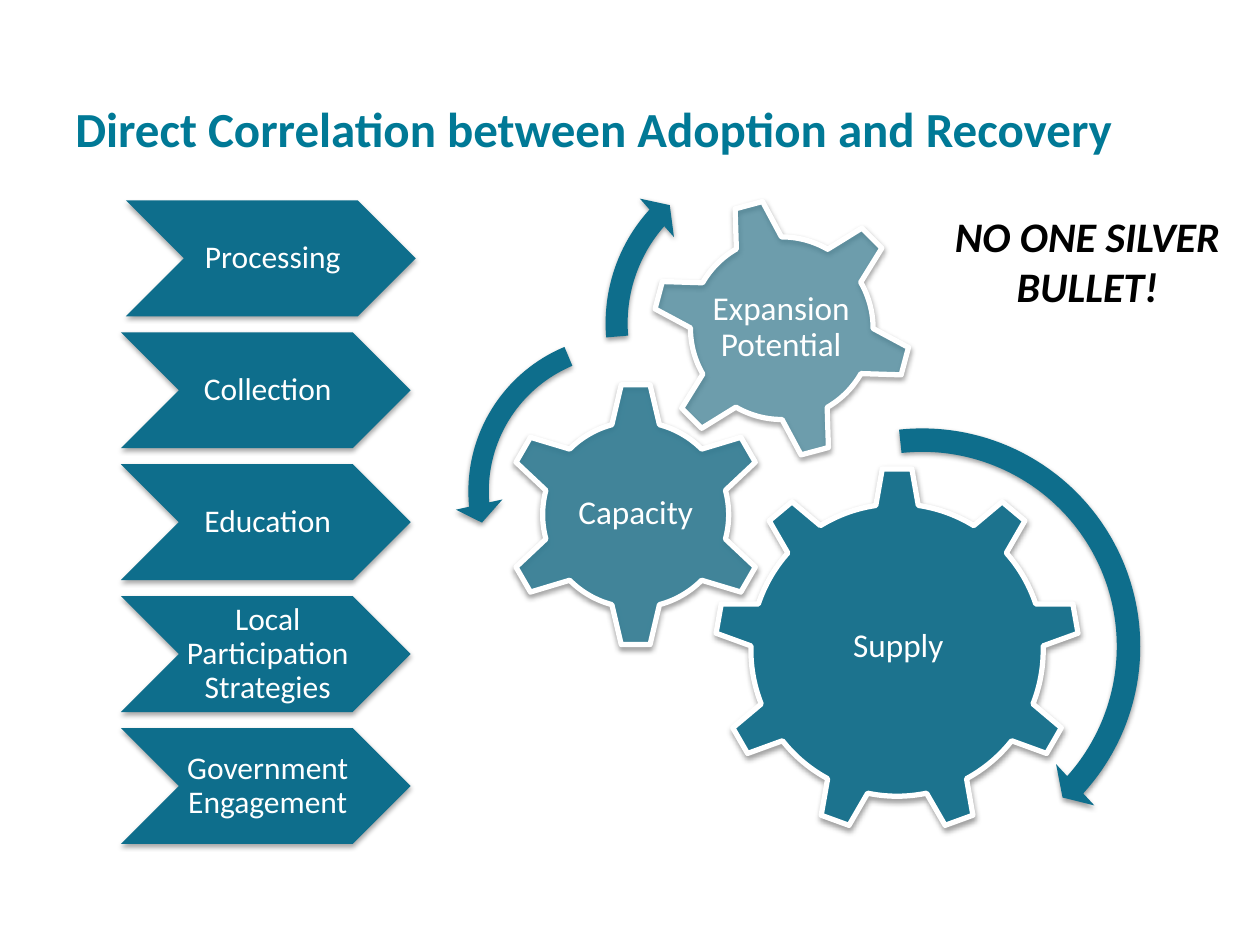
from lxml import etree
from pptx import Presentation
from pptx.dml.color import RGBColor
from pptx.enum.shapes import MSO_SHAPE
from pptx.enum.text import MSO_ANCHOR, PP_ALIGN
from pptx.oxml.ns import qn
from pptx.util import Inches, Pt

GEAR_6, GEAR_9 = MSO_SHAPE.GEAR_6, MSO_SHAPE.GEAR_9
CHEVRON = MSO_SHAPE.CHEVRON
ARROW, LEFT_ARROW = MSO_SHAPE.CIRCULAR_ARROW, MSO_SHAPE.LEFT_CIRCULAR_ARROW
TOP, MIDDLE = MSO_ANCHOR.TOP, MSO_ANCHOR.MIDDLE
LEFT, CENTER = PP_ALIGN.LEFT, PP_ALIGN.CENTER

TEAL = RGBColor(0x0E, 0x6E, 0x8C)
TITLE_TEAL = RGBColor(0x00, 0x79, 0x96)
WHITE = RGBColor(0xFF, 0xFF, 0xFF)
BLACK = RGBColor(0, 0, 0)

# The page is a grid of square cells; all places below are in cells.
COLUMNS, ROWS = 100, 75
CELL = Inches(0.1)

GEAR_MARGINS = (0.3, 0.3, 0.3, 0.3)
CHEVRON_MARGINS = (0.3, 0.1, 0, 0.1)

# kind, place, rotation, opacity %, label, label place
GEARS = [
    (GEAR_9, (56.7, 37.1, 29, 29), 0, 90, "Supply", (62.6, 43.9, 17.4, 14.9)),
    (GEAR_6, (39.9, 30.3, 21.1, 21.1), 0, 70, "Capacity", (45.2, 35.6, 10.5, 10.4)),
    (GEAR_6, (51.7, 15.7, 20.7, 20.7), 345, 50, "Expansion Potential",
     (56.2, 20.2, 11.6, 11.6)),
]
ARROWS = [
    (ARROW, (54.6, 32.7, 37.2, 37.2), (0.05, 2.99, 25.29, 158.33, 0.06)),
    (LEFT_ARROW, (36.1, 25.5, 27, 27), (0.06, 4.3, 104.89, 148.38, 0.07)),
    (ARROW, (46.9, 11.1, 29.1, 29.1), (0.06, 3.94, 133.14, 105.08, 0.07)),
]
FACTORS = ["Processing", "Collection", "Education",
           "Local Participation Strategies", "Government Engagement"]


def cells(*counts):
    return [round(count * CELL) for count in counts]


def add_shadow(shape, opacity, distance):
    """Give the shape a soft black shadow straight below it."""
    shape.shadow.inherit = False
    effects = shape._element.spPr.find(qn("a:effectLst"))
    shadow = etree.SubElement(effects, qn("a:outerShdw"), blurRad=str(Pt(3.1)),
                              dist=str(Pt(distance)), dir="5400000",
                              rotWithShape="0")
    color = etree.SubElement(shadow, qn("a:srgbClr"), val=str(BLACK))
    etree.SubElement(color, qn("a:alpha"), val=str(opacity * 1000))


def add_solid(group, kind, place, shadow=(38, 1.6)):
    """Add a teal shape without an outline."""
    shape = group.shapes.add_shape(kind, *cells(*place))
    shape.fill.solid()
    shape.fill.fore_color.rgb = TEAL
    shape.line.fill.background()
    add_shadow(shape, *shadow)
    return shape


def add_text(parent, place, text, color, anchor=TOP, align=CENTER,
             margins=None, spacing=None, **font_format):
    box = parent.shapes.add_textbox(*cells(*place))
    frame = box.text_frame
    frame.word_wrap = True
    frame.vertical_anchor = anchor
    if margins:
        sides = ("left", "top", "right", "bottom")
        for side, margin in zip(sides, cells(*margins)):
            setattr(frame, f"margin_{side}", margin)
    para = frame.paragraphs[0]
    para.alignment = align
    para.line_spacing = spacing
    span = para.add_run()
    span.text = text
    span.font.color.rgb = color
    for name, value in {"name": "Calibri", **font_format}.items():
        setattr(span.font, name, value)


def add_label(group, place, text, size, margins):
    add_text(group, place, text, WHITE, anchor=MIDDLE, margins=margins,
             spacing=0.9, size=Pt(size))


def add_gear(group, kind, place, rotation, opacity, label, label_place):
    gear = add_solid(group, kind, place)
    gear.rotation = rotation
    color = gear._element.spPr.find(qn("a:solidFill"))[0]
    etree.SubElement(color, qn("a:alpha"), val=str(opacity * 1000))
    gear.line.color.rgb = WHITE
    gear.line.width = Pt(3)
    add_label(group, label_place, label, 19, GEAR_MARGINS)


def add_arrow(group, kind, place, adjustments):
    arrow = add_solid(group, kind, place)
    for index, value in enumerate(adjustments):
        arrow.adjustments[index] = value


def add_factor(group, row, label):
    """Add one chevron of the column; its label fits between the points."""
    width, height, pitch = 23, 9.2, 10.47
    left = 10 if row == 0 else 9.6
    top = 15.9 + row * pitch
    add_solid(group, CHEVRON, (left, top, width, height), shadow=(35, 1.8))
    add_label(group, (left + height / 2, top, width - height, height), label,
              18, CHEVRON_MARGINS)


def main():
    deck = Presentation()
    deck.slide_width, deck.slide_height = COLUMNS * CELL, ROWS * CELL
    page = deck.slides.add_slide(deck.slide_layouts[6])

    gear_group = page.shapes.add_group_shape()
    for gear in GEARS:
        add_gear(gear_group, *gear)
    for arrow in ARROWS:
        add_arrow(gear_group, *arrow)

    factor_group = page.shapes.add_group_shape()
    for row, label in enumerate(FACTORS):
        add_factor(factor_group, row, label)

    add_text(page, (71.3, 16.2, 30, 9.1), "NO ONE SILVER BULLET!", BLACK,
             size=Pt(24), bold=True, italic=True)
    add_text(page, (5, 7.3, 90, 12.5),
             "Direct Correlation between Adoption and Recovery", TITLE_TEAL,
             align=LEFT, size=Pt(28), bold=True)
    deck.save("out.pptx")


if __name__ == "__main__":
    main()
